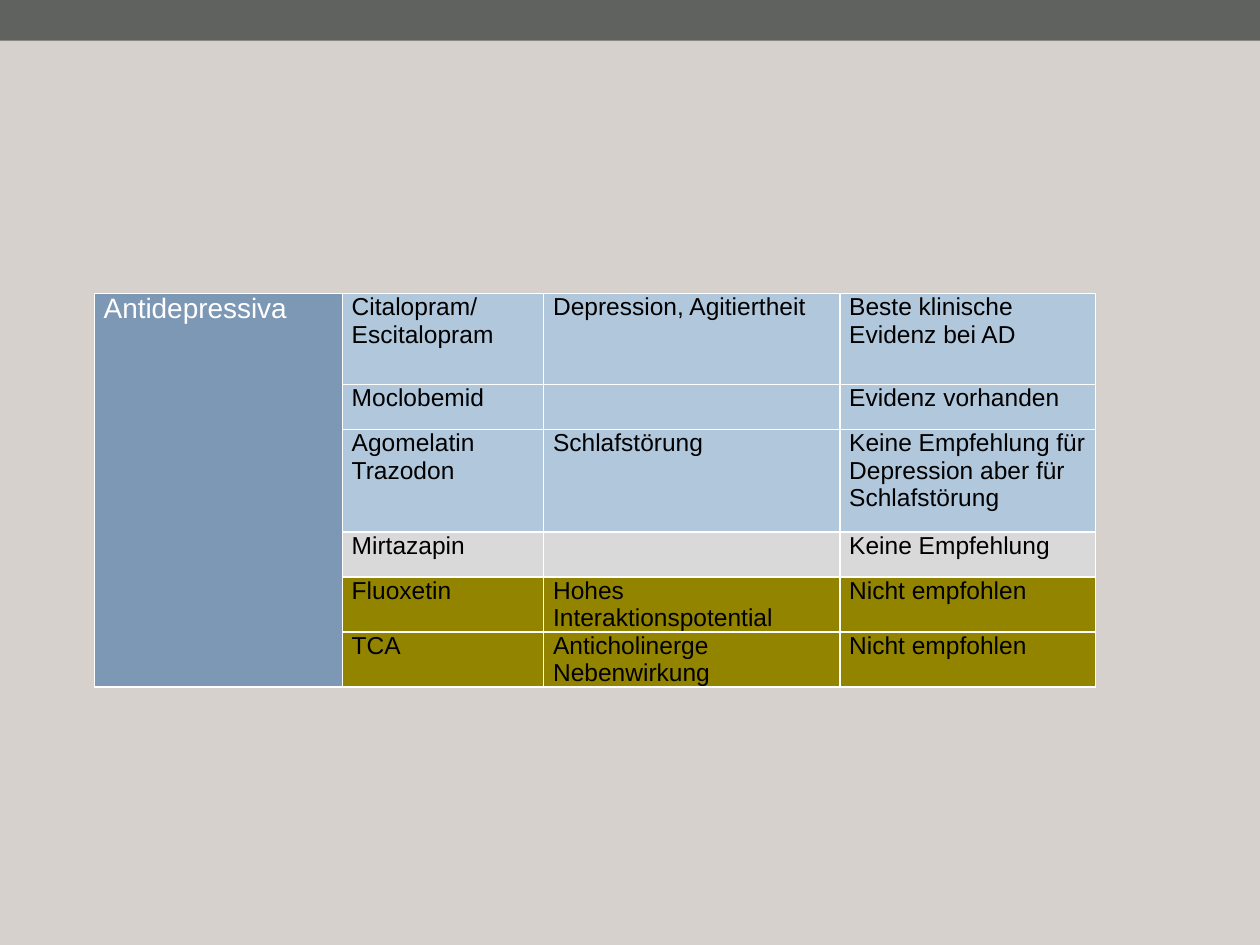
import pptx
import pptx.dml.color
import pptx.enum.shapes
import pptx.oxml
import pptx.oxml.ns
import pptx.util
from pptx.util import Cm

COLORS = {
    "background": "D6D1CD",
    "band": "5F625F",
    "group": "4B79A6",
    "evidence": "B1C7DC",
    "neutral": "D9D9D9",
    "avoid": "938400",
    "white": "FFFFFF",
    "black": "000000",
}
GROUP = "Antidepressiva"
GROUP_OPACITY = 64
# Rating, row height in cm, then drug, indication and recommendation
ROWS = [
    ("evidence", 1.83, "Citalopram/ Escitalopram", "Depression, Agitiertheit",
     "Beste klinische Evidenz bei AD"),
    ("evidence", 0.91, "Moclobemid", "", "Evidenz vorhanden"),
    ("evidence", 2.06, "Agomelatin\nTrazodon", "Schlafstörung",
     "Keine Empfehlung für Depression aber für Schlafstörung"),
    ("neutral", 0.91, "Mirtazapin", "", "Keine Empfehlung"),
    ("avoid", 0.91, "Fluoxetin", "Hohes Interaktionspotential", "Nicht empfohlen"),
    ("avoid", 0.91, "TCA", "Anticholinerge Nebenwirkung", "Nicht empfohlen"),
]
COLUMN_WIDTHS = [5.0, 4.06, 5.97, 5.16]
TABLE_LEFT, TABLE_TOP = 1.9, 5.92
CELL_MARGINS = {
    "margin_left": Cm(0.19), "margin_right": Cm(0.19),
    "margin_top": 0, "margin_bottom": 0,
}


def rgb(name):
    return pptx.dml.color.RGBColor.from_string(COLORS[name])


def paint(fill, name):
    fill.solid()
    fill.fore_color.rgb = rgb(name)


def add_borders(cell):
    properties = cell._tc.get_or_add_tcPr()
    for side in ("L", "R", "T", "B"):
        properties.append(pptx.oxml.parse_xml(
            f'<a:ln{side} {pptx.oxml.ns.nsdecls("a")} w="{pptx.util.Pt(1)}">'
            f'<a:solidFill><a:srgbClr val="{COLORS["white"]}"/></a:solidFill>'
            f'</a:ln{side}>'))


def format_cell(cell, text, fill, text_color, size):
    for name, value in CELL_MARGINS.items():
        setattr(cell, name, value)
    add_borders(cell)
    paint(cell.fill, fill)
    cell.text = text
    font_format = {"name": "Arial", "size": pptx.util.Pt(size), "bold": False}
    for paragraph in cell.text_frame.paragraphs:
        for run in paragraph.runs:
            for name, value in font_format.items():
                setattr(run.font, name, value)
            run.font.color.rgb = rgb(text_color)


def add_drug_table(slide):
    heights = [row[1] for row in ROWS]
    table = slide.shapes.add_table(
        len(ROWS), len(COLUMN_WIDTHS), Cm(TABLE_LEFT), Cm(TABLE_TOP),
        Cm(sum(COLUMN_WIDTHS)), Cm(sum(heights))).table
    table.first_row = table.horz_banding = False
    for column, width in zip(table.columns, COLUMN_WIDTHS):
        column.width = Cm(width)

    for index, (rating, height, *texts) in enumerate(ROWS):
        table.rows[index].height = Cm(height)
        group_text = GROUP if index == 0 else ""
        group_cell = table.cell(index, 0)
        format_cell(group_cell, group_text, "group", "white", 16)
        for color in group_cell._tc.tcPr.xpath("./a:solidFill/a:srgbClr"):
            color.append(pptx.oxml.parse_xml(
                f'<a:alpha {pptx.oxml.ns.nsdecls("a")} val="{GROUP_OPACITY * 1000}"/>'))
        for column, text in enumerate(texts, start=1):
            format_cell(table.cell(index, column), text, rating, "black", 14)
    table.cell(0, 0).merge(table.cell(len(ROWS) - 1, 0))


def main():
    presentation = pptx.Presentation()
    presentation.slide_width, presentation.slide_height = Cm(25.4), Cm(19.05)
    slide = presentation.slides.add_slide(presentation.slide_layouts[6])
    paint(slide.background.fill, "background")

    band = slide.shapes.add_shape(
        pptx.enum.shapes.MSO_SHAPE.RECTANGLE, 0, 0, presentation.slide_width, Cm(0.82))
    band.shadow.inherit = False
    paint(band.fill, "band")
    band.line.fill.background()

    add_drug_table(slide)
    presentation.save("out.pptx")


if __name__ == "__main__":
    main()
